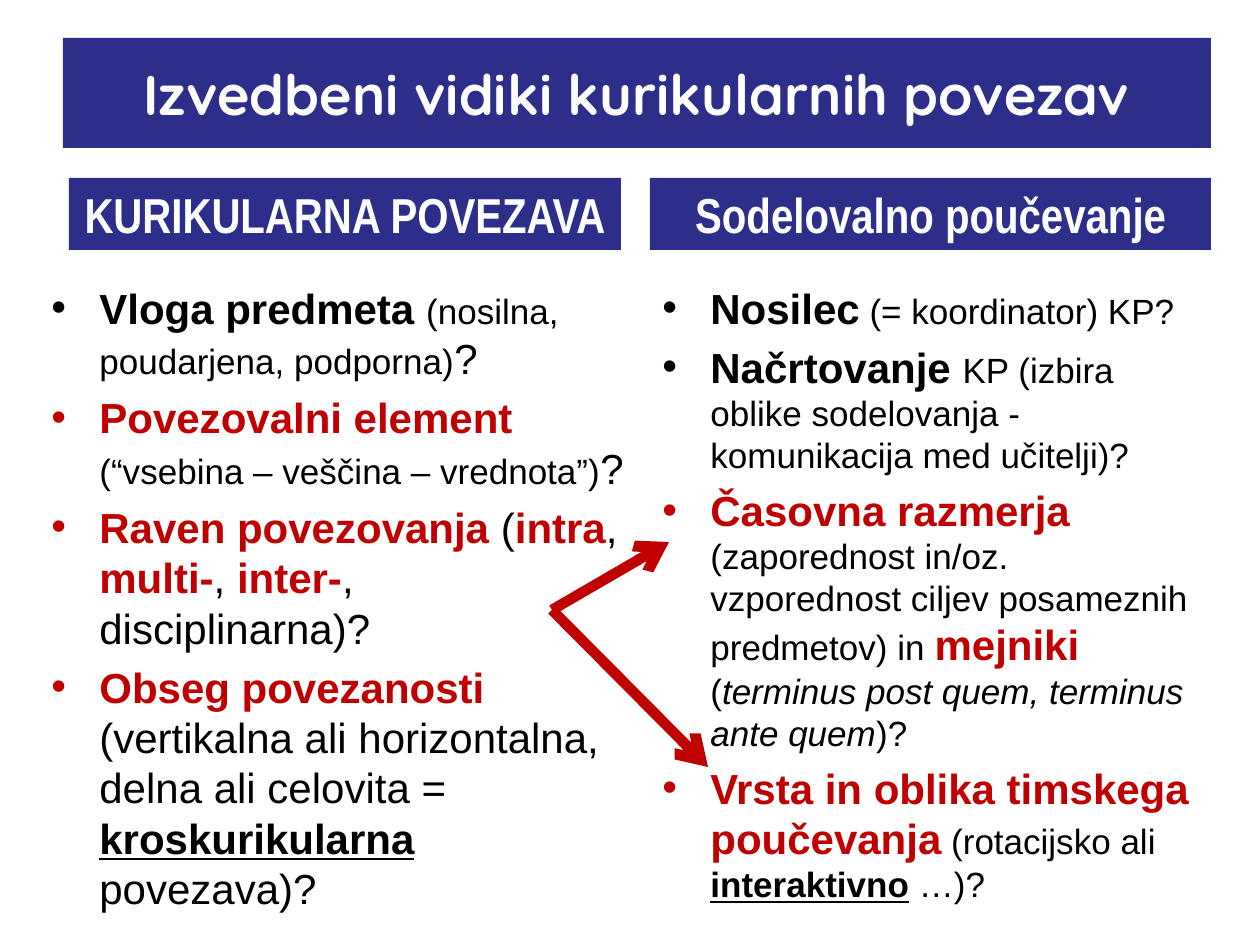
from dataclasses import dataclass
from lxml import etree
from pptx import Presentation
from pptx.dml.color import RGBColor
from pptx.enum.shapes import MSO_CONNECTOR, MSO_SHAPE
from pptx.enum.text import MSO_ANCHOR, PP_ALIGN
from pptx.oxml.ns import qn
from pptx.util import Pt

NAVY = RGBColor(0x2D, 0x2D, 0x8A)
RED = RGBColor(0xC0, 0x00, 0x00)
BLACK = RGBColor(0x00, 0x00, 0x00)
WHITE = RGBColor(0xFF, 0xFF, 0xFF)
RECT = MSO_SHAPE.RECTANGLE
LINE = MSO_CONNECTOR.STRAIGHT
CENTER = PP_ALIGN.CENTER
MIDDLE = MSO_ANCHOR.MIDDLE
BIG, SMALL = 24, 20
SCALE = 914400 / 126


def px(*vals):
    return [round(val * SCALE) for val in vals]


@dataclass
class Deck:
    slide: object
    font: str = "Arial"
    gap: int = 5
    hang: int = 48

    def banner(self, box, text, font, size):
        shape = self.slide.shapes.add_shape(RECT, *px(*box))
        shape.shadow.inherit = False
        shape.fill.solid()
        shape.fill.fore_color.rgb = NAVY
        shape.line.fill.background()
        frame = shape.text_frame
        frame.word_wrap = True
        frame.vertical_anchor = MIDDLE
        para = frame.paragraphs[0]
        para.text = text
        para.alignment = CENTER
        para.font.name = font
        para.font.size = Pt(size)
        para.font.bold = True
        para.font.color.rgb = WHITE

    def points(self, box, items):
        frame = self.slide.shapes.add_textbox(*px(*box)).text_frame
        frame.word_wrap = True
        for num, runs in enumerate(items):
            para = frame.add_paragraph() if num else frame.paragraphs[0]
            if num:
                para.space_before = Pt(self.gap)
            self.bullet(para)
            para.font.name = self.font
            for text, size, color, marks in runs:
                run = para.add_run()
                run.text = text
                run.font.size = Pt(size)
                run.font.color.rgb = color
                run.font.bold = "b" in marks
                run.font.italic = "i" in marks
                run.font.underline = "u" in marks

    def bullet(self, para):
        props = para._p.get_or_add_pPr()
        hang = px(self.hang)[0]
        props.set("marL", str(hang))
        props.set("indent", str(-hang))
        etree.SubElement(props, qn("a:buFont"), typeface=self.font)
        etree.SubElement(props, qn("a:buChar"), char="•")

    def arrow(self, start, end):
        link = self.slide.shapes.add_connector(LINE, *px(*start, *end))
        link.line.color.rgb = RED
        link.line.width = Pt(6)
        etree.SubElement(link.line._get_or_add_ln(), qn("a:tailEnd"), type="arrow")
        etree.SubElement(link._element.spPr, qn("a:effectLst"))


LEFT = [
    [("Vloga predmeta ", BIG, BLACK, "b"),
     ("(nosilna, poudarjena, podporna)", SMALL, BLACK, ""),
     ("?", BIG, BLACK, "")],
    [("Povezovalni element ", BIG, RED, "b"),
     ("(“vsebina – veščina – vrednota”)", SMALL, BLACK, ""),
     ("?", BIG, BLACK, "")],
    [("Raven povezovanja ", BIG, RED, "b"),
     ("(", BIG, BLACK, ""),
     ("intra", BIG, RED, "b"),
     (", ", BIG, BLACK, ""),
     ("multi-", BIG, RED, "b"),
     (", ", BIG, BLACK, ""),
     ("inter-", BIG, RED, "b"),
     (", disciplinarna)?", BIG, BLACK, "")],
    [("Obseg povezanosti ", BIG, RED, "b"),
     ("(vertikalna ali horizontalna, delna ali celovita = ", BIG, BLACK, ""),
     ("kroskurikularna", BIG, BLACK, "bu"),
     (" povezava)?", BIG, BLACK, "")],
]
RIGHT = [
    [("Nosilec", BIG, BLACK, "b"),
     (" (= koordinator) KP?", SMALL, BLACK, "")],
    [("Načrtovanje ", BIG, BLACK, "b"),
     ("KP (izbira oblike sodelovanja - komunikacija med učitelji)?",
      SMALL, BLACK, "")],
    [("Časovna razmerja ", BIG, RED, "b"),
     ("(zaporednost in/oz. vzporednost ciljev posameznih predmetov) in ",
      SMALL, BLACK, ""),
     ("mejniki", BIG, RED, "b"),
     (" (", SMALL, BLACK, ""),
     ("terminus post quem, terminus ante quem", SMALL, BLACK, "i"),
     (")?", SMALL, BLACK, "")],
    [("Vrsta in oblika timskega poučevanja", BIG, RED, "b"),
     (" (rotacijsko ali ", SMALL, BLACK, ""),
     ("interaktivno", SMALL, BLACK, "bu"),
     (" …)?", SMALL, BLACK, "")],
]


def main():
    prs = Presentation()
    prs.slide_width, prs.slide_height = px(1260, 945)
    deck = Deck(prs.slides.add_slide(prs.slide_layouts[6]))
    deck.banner((63, 38, 1148, 110), "Izvedbeni vidiki kurikularnih povezav",
                "Quicksand", 32)
    deck.points((39, 276, 601, 640), LEFT)
    deck.points((650, 276, 561, 640), RIGHT)
    deck.banner((69, 178, 552, 72), "KURIKULARNA POVEZAVA", "Arial Narrow", 28)
    deck.banner((650, 178, 561, 72), "Sodelovalno poučevanje", "Arial Narrow", 28)
    for end in ((708, 767), (669, 542)):
        deck.arrow((552, 610), end)
    prs.save("out.pptx")


if __name__ == "__main__":
    main()
